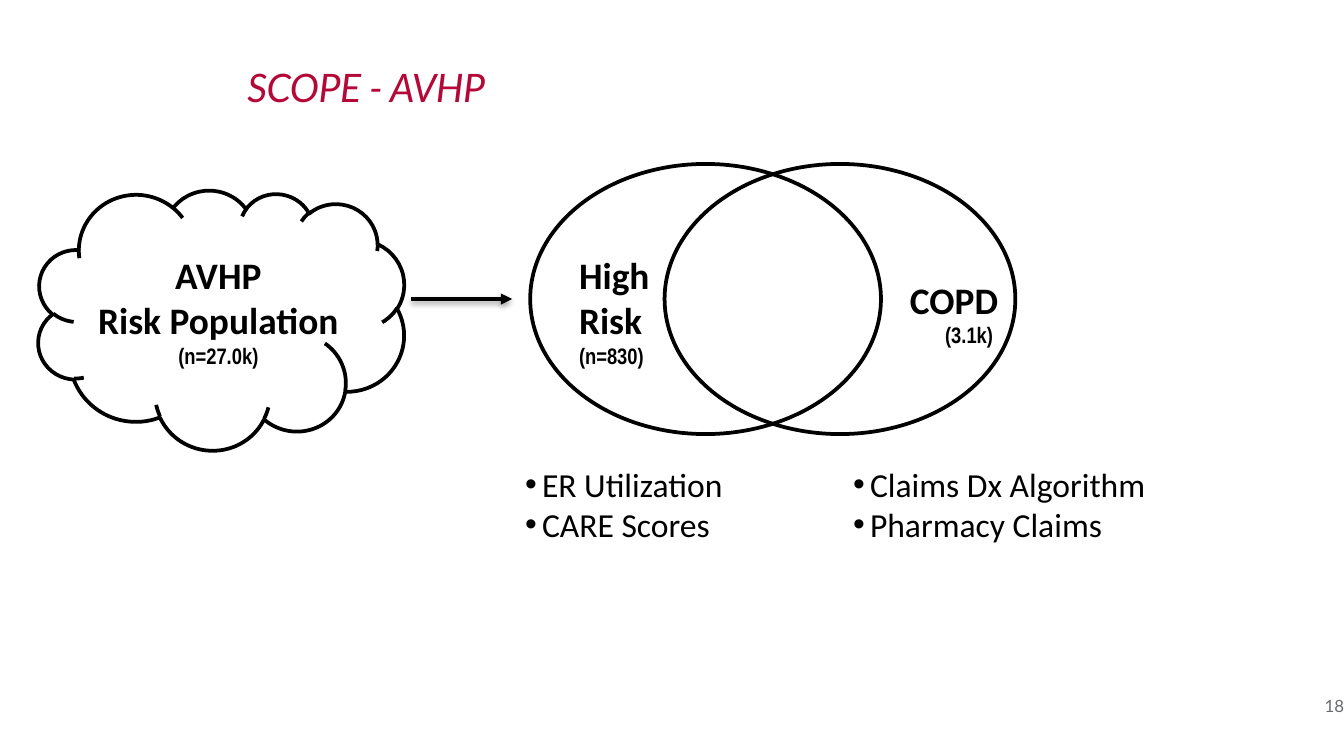
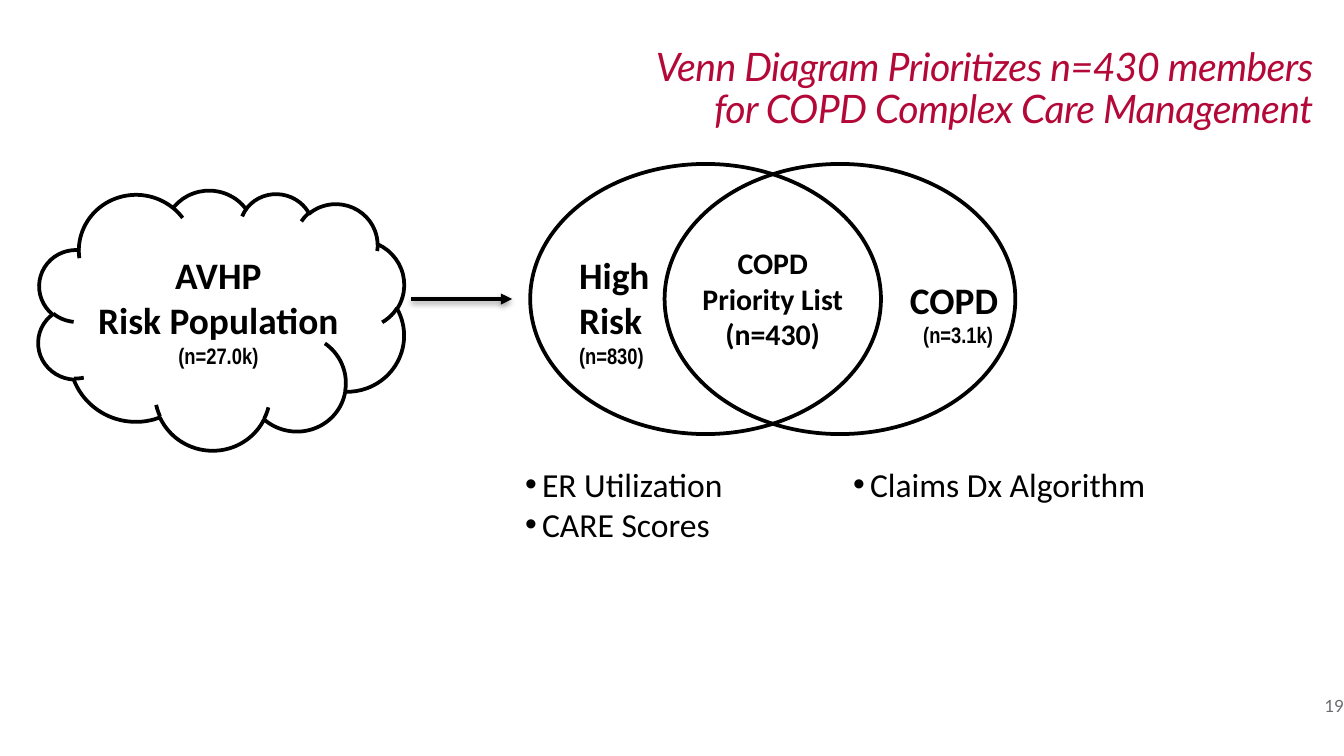
"""Build two slides that narrow a health plan's risk population to a COPD priority list."""
from dataclasses import dataclass

from lxml import etree
from pptx import Presentation
from pptx import util as u
from pptx.dml import color
from pptx.enum import shapes, text
from pptx.oxml import ns

PX = 4572
LEFT, CENTER, RIGHT = text.PP_ALIGN.LEFT, text.PP_ALIGN.CENTER, text.PP_ALIGN.RIGHT


@dataclass(frozen=True)
class Theme:
    ink: str = "000000"
    paper: str = "FFFFFF"
    accent: str = "B30838"
    muted: str = "696A6D"
    body_font: str = "Calibri"
    count_font: str = "Arial Narrow"
    frame_font: str = "Lato"
    title: int = 21
    head: int = 20
    bullet: int = 18
    overlap: int = 16
    count: int = 12
    footer: int = 9
    line: int = 2


T = Theme()
COUNT = dict(size=T.count, font=T.count_font)


def px(*values):
    return [u.Emu(v * PX) for v in values]


def rgb(value):
    return color.RGBColor.from_string(value)


def sub(parent, tag, **attrs):
    return etree.SubElement(parent, ns.qn(tag), attrs)


def add_run(p, words, size=T.head, font=T.body_font, ink=T.ink,
            bold=False, italic=False, spacing=None):
    r = p.add_run()
    r.text = words
    r.font.size, r.font.name = u.Pt(size), font
    r.font.bold, r.font.italic = bold, italic
    r.font.color.rgb = rgb(ink)
    if spacing is not None:
        r.font._element.set("spc", str(spacing))


def add_bullet(p, indent=25):
    pPr = p._p.get_or_add_pPr()
    pPr.set("marL", str(indent * PX))
    pPr.set("indent", str(-indent * PX))
    sub(pPr, "a:buFont", typeface="Arial")
    sub(pPr, "a:buChar", char="•")


def add_text(s, box, *lines, align=LEFT, frame=False, bullets=False,
             leading=None, **fmt):
    """Add paragraphs; a line is words, or words with overrides; \\v breaks a line."""
    tf = s.shapes.add_textbox(*px(*box)).text_frame
    tf.word_wrap = True
    if frame:
        tf.margin_left = tf.margin_top = tf.margin_right = tf.margin_bottom = 0
        tf.vertical_anchor = text.MSO_ANCHOR.MIDDLE
    else:
        tf.auto_size = text.MSO_AUTO_SIZE.SHAPE_TO_FIT_TEXT
    for i, line in enumerate(lines):
        words, extra = (line, {}) if isinstance(line, str) else line
        p = tf.add_paragraph() if i else tf.paragraphs[0]
        if bullets:
            add_bullet(p)
        p.alignment = align
        if leading:
            p.line_spacing = leading
        for j, part in enumerate(words.split("\v")):
            if j:
                p.add_line_break()
            add_run(p, part, **{**fmt, **extra})


def add_outline(s, kind, box, fill=None, rotation=0):
    sp = s.shapes.add_shape(kind, *px(*box))
    sp.shadow.inherit = False
    sp.rotation = rotation
    if fill:
        sp.fill.solid()
        sp.fill.fore_color.rgb = rgb(fill)
    else:
        sp.fill.background()
    sp.line.color.rgb = rgb(T.ink)
    sp.line.width = u.Pt(T.line)


def add_arrow(s, x1, x2, y):
    c = s.shapes.add_connector(shapes.MSO_CONNECTOR.STRAIGHT, *px(x1, y, x2, y))
    c.line.color.rgb = rgb(T.ink)
    c.line.width = u.Pt(T.line)
    sub(c.line._get_or_add_ln(), "a:tailEnd", type="triangle")
    effects = sub(c._element.spPr, "a:effectLst")
    shadow = sub(effects, "a:outerShdw", blurRad="40000", dist="20000",
                 dir="5400000", rotWithShape="0")
    sub(sub(shadow, "a:srgbClr", val=T.ink), "a:alpha", val="38000")


def add_title(s, words, align):
    add_text(s, (368, 54, 1586, 160), words, align=align, frame=True, leading=0.9,
             size=T.title, font=T.frame_font, ink=T.accent, italic=True, spacing=-30)


def add_number(s, number):
    add_text(s, (1842, 1021, 158, 60), str(number), align=RIGHT, frame=True,
             size=T.footer, font=T.frame_font, ink=T.muted)


def add_population(s):
    add_outline(s, shapes.MSO_SHAPE.CLOUD, (54, 276, 549, 394), T.paper, 9.4)
    add_text(s, (38, 366, 574, 262), "AVHP", "Risk Population", ("(n=27.0k)", COUNT),
             align=CENTER, bold=True)
    add_arrow(s, 612, 762, 445)


def add_venn(s, copd_count):
    add_outline(s, shapes.MSO_SHAPE.OVAL, (789, 244, 522, 402), T.paper)
    add_text(s, (842, 366, 344, 196), "High", "Risk", ("(n=830)", COUNT), bold=True)
    add_outline(s, shapes.MSO_SHAPE.OVAL, (989, 244, 522, 402))
    add_text(s, (1161, 402, 344, 128), "COPD", (copd_count, COUNT),
             align=RIGHT, bold=True)


def add_sources(s, claims):
    risk = ("ER Utilization", "CARE Scores")
    for left, width, lines in ((762, 360, risk), (1250, 494, claims)):
        add_text(s, (left, 680, width, 142), *lines, bullets=True, size=T.bullet)


def add_slide(prs, number, title, align, copd_count, claims, overlap=()):
    s = prs.slides.add_slide(prs.slide_layouts[6])
    add_number(s, number)
    add_population(s)
    add_venn(s, copd_count)
    add_sources(s, claims)
    if overlap:
        add_text(s, (989, 354, 322, 182), *overlap, align=CENTER,
                 size=T.overlap, bold=True)
    add_title(s, title, align)


def main():
    prs = Presentation()
    prs.slide_width, prs.slide_height = px(2000, 1125)
    add_slide(prs, 18, "SCOPE - AVHP", LEFT, "(3.1k) ",
              ("Claims Dx Algorithm", "Pharmacy Claims"))
    add_slide(prs, 19,
              "Venn Diagram Prioritizes n=430 members\vfor COPD Complex Care Management",
              RIGHT, "(n=3.1k) ", ("Claims Dx Algorithm",),
              ("COPD", "Priority List", "(n=430)"))
    prs.save("out.pptx")


if __name__ == "__main__":
    main()
